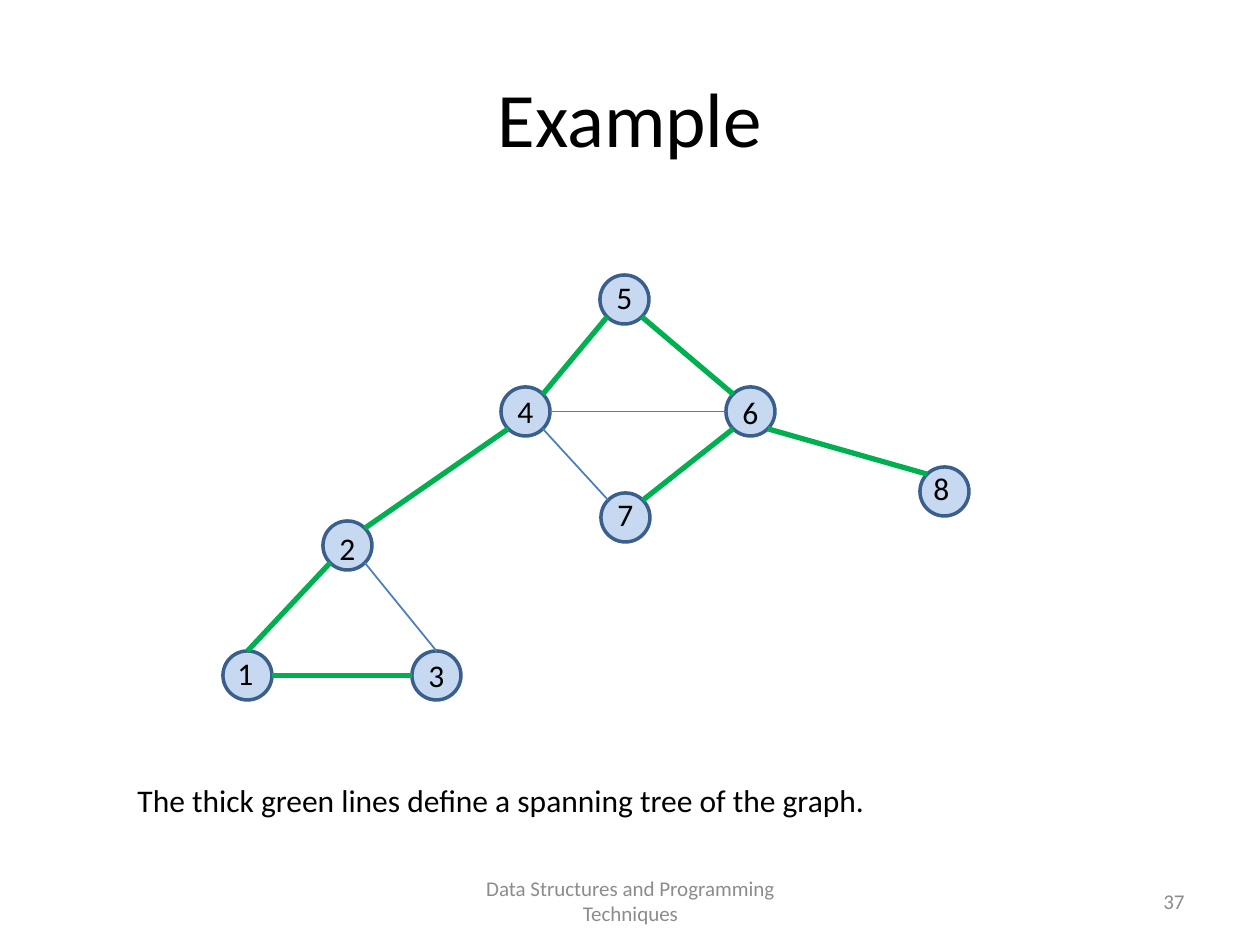
import math
from dataclasses import dataclass
from enum import IntEnum

from lxml import etree
from pptx import Presentation
from pptx import util as u
from pptx.dml.color import RGBColor
from pptx.enum import shapes, text
from pptx.oxml.ns import qn

PX_PER_INCH = 126
DIAMETER = 49
LABEL_HEIGHT = 50


def px(length: float) -> u.Emu:
    return u.Emu(round(length * u.Inches(1) / PX_PER_INCH))


@dataclass(frozen=True)
class Theme:
    font: str = "Calibri"
    ink: str = "000000"
    muted: str = "8C8C8C"
    node_fill: str = "C6D9F1"
    node_line: str = "3A5F8C"
    edge: str = "4B7EBC"
    tree: str = "00B050"
    title_size: int = 44
    body_size: int = 18
    footer_size: int = 12
    node_width: int = 2
    edge_width: int = 1
    tree_width: int = 3


THEME = Theme()


class Port(IntEnum):
    RIGHT = 0
    BOTTOM_RIGHT = 45
    BOTTOM = 90
    BOTTOM_LEFT = 135
    LEFT = 180
    TOP_LEFT = 225
    TOP = 270
    TOP_RIGHT = 315


@dataclass(frozen=True)
class Node:
    left: int
    top: int
    label_dx: int = 0
    label_dy: int = 0

    def point(self, port: Port) -> tuple[u.Emu, u.Emu]:
        radius = DIAMETER / 2
        angle = math.radians(port)
        return (px(self.left + radius + radius * math.cos(angle)),
                px(self.top + radius + radius * math.sin(angle)))


@dataclass(frozen=True)
class Edge:
    start: int
    start_port: Port
    end: int
    end_port: Port
    in_tree: bool = True


@dataclass(frozen=True)
class Caption:
    wording: str
    left: int
    top: int
    width: int
    height: int
    size: int
    color: str
    align: text.PP_ALIGN
    anchor: text.MSO_ANCHOR = text.MSO_ANCHOR.TOP


NODES = {
    1: Node(223, 651, -2, -3),
    2: Node(323, 521, 0, 2),
    3: Node(412, 651, 0, -1),
    4: Node(501, 387, 0, -1),
    5: Node(600, 275, 0, -3),
    6: Node(726, 387),
    7: Node(601, 493, 0, -4),
    8: Node(920, 467, -3, -4),
}

EDGES = [
    Edge(4, Port.BOTTOM_RIGHT, 7, Port.TOP_LEFT, in_tree=False),
    Edge(5, Port.BOTTOM_RIGHT, 6, Port.TOP_LEFT),
    Edge(6, Port.BOTTOM_RIGHT, 8, Port.TOP_LEFT),
    Edge(5, Port.BOTTOM_LEFT, 4, Port.TOP_RIGHT),
    Edge(6, Port.BOTTOM_LEFT, 7, Port.TOP_RIGHT),
    Edge(4, Port.RIGHT, 6, Port.LEFT, in_tree=False),
    Edge(2, Port.TOP_RIGHT, 4, Port.BOTTOM_LEFT),
    Edge(2, Port.BOTTOM_LEFT, 1, Port.TOP),
    Edge(2, Port.BOTTOM_RIGHT, 3, Port.TOP, in_tree=False),
    Edge(1, Port.RIGHT, 3, Port.LEFT),
]

TITLE = Caption("Example", 63, 38, 1134, 157, THEME.title_size, THEME.ink,
                text.PP_ALIGN.CENTER, text.MSO_ANCHOR.MIDDLE)

CAPTIONS = [
    Caption("The thick green lines define a spanning tree of the graph.",
            125, 775, 1052, 50, THEME.body_size, THEME.ink, text.PP_ALIGN.LEFT),
    Caption("Data Structures and Programming Techniques",
            431, 876, 399, 50, THEME.footer_size, THEME.muted,
            text.PP_ALIGN.CENTER, text.MSO_ANCHOR.MIDDLE),
    Caption("37", 903, 876, 294, 50, THEME.footer_size, THEME.muted,
            text.PP_ALIGN.RIGHT, text.MSO_ANCHOR.MIDDLE),
]


def write(holder, caption: Caption) -> None:
    holder.left, holder.top = px(caption.left), px(caption.top)
    holder.width, holder.height = px(caption.width), px(caption.height)
    frame = holder.text_frame
    frame.word_wrap = True
    frame.vertical_anchor = caption.anchor
    paragraph = frame.paragraphs[0]
    paragraph.alignment = caption.align
    run = paragraph.add_run()
    run.text = caption.wording
    run.font.name = THEME.font
    run.font.size = u.Pt(caption.size)
    run.font.color.rgb = RGBColor.from_string(caption.color)


def add_caption(slide, caption: Caption) -> None:
    write(slide.shapes.add_textbox(0, 0, 0, 0), caption)


def add_node(slide, number: int, node: Node) -> None:
    circle = slide.shapes.add_shape(shapes.MSO_SHAPE.OVAL, px(node.left), px(node.top),
                                    px(DIAMETER), px(DIAMETER))
    circle.shadow.inherit = False
    circle.fill.solid()
    circle.fill.fore_color.rgb = RGBColor.from_string(THEME.node_fill)
    circle.line.color.rgb = RGBColor.from_string(THEME.node_line)
    circle.line.width = u.Pt(THEME.node_width)
    add_caption(slide, Caption(str(number), node.left + node.label_dx, node.top + node.label_dy,
                               DIAMETER, LABEL_HEIGHT, THEME.body_size, THEME.ink,
                               text.PP_ALIGN.CENTER))


def add_edge(slide, edge: Edge) -> None:
    line = slide.shapes.add_connector(shapes.MSO_CONNECTOR.STRAIGHT,
                                      *NODES[edge.start].point(edge.start_port),
                                      *NODES[edge.end].point(edge.end_port))
    color, width = ((THEME.tree, THEME.tree_width) if edge.in_tree
                    else (THEME.edge, THEME.edge_width))
    line.line.color.rgb = RGBColor.from_string(color)
    line.line.width = u.Pt(width)
    etree.SubElement(line._element.spPr, qn("a:effectLst"))


def main() -> None:
    deck = Presentation()
    deck.slide_width, deck.slide_height = px(1260), px(945)
    slide = deck.slides.add_slide(deck.slide_layouts[5])
    write(slide.shapes.title, TITLE)
    for number, node in NODES.items():
        add_node(slide, number, node)
    for edge in EDGES:
        add_edge(slide, edge)
    for caption in CAPTIONS:
        add_caption(slide, caption)
    deck.save("out.pptx")


if __name__ == "__main__":
    main()
